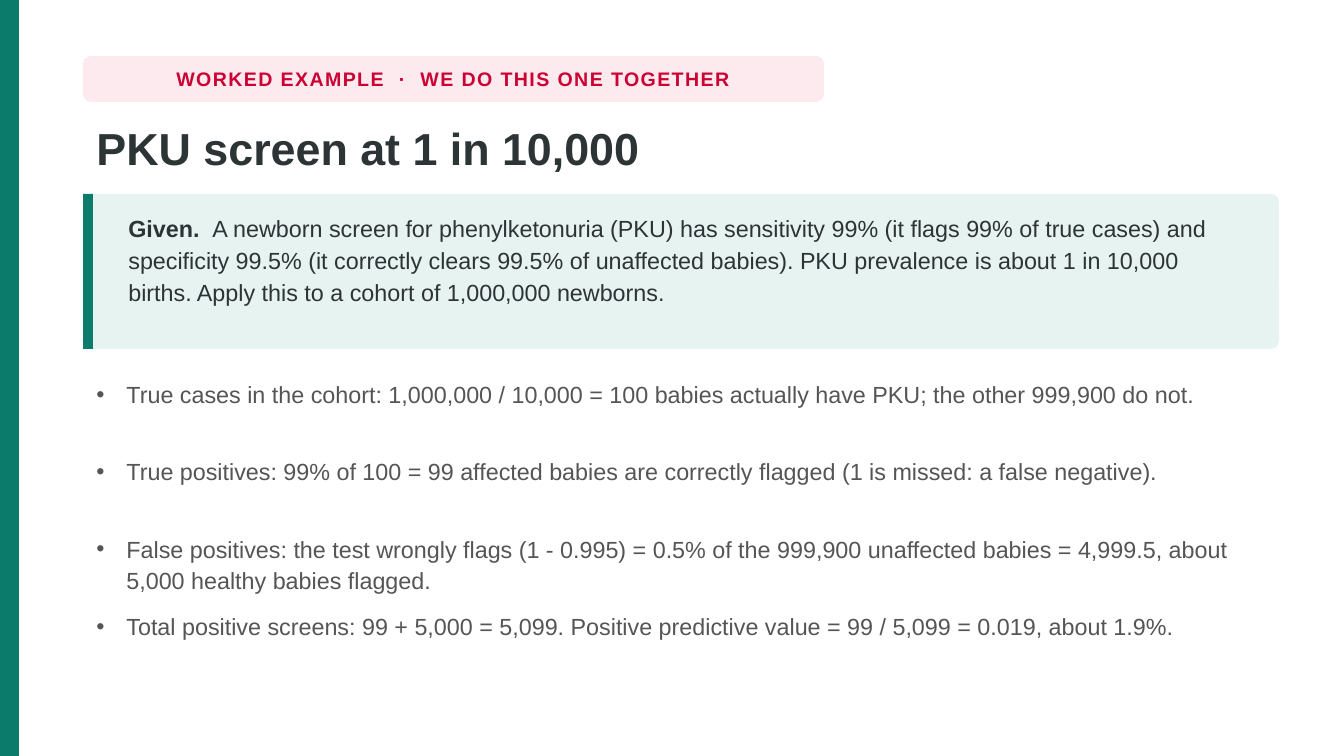
"""Build the worked-example slide on a newborn PKU screen."""
import pptx
import pptx.dml.color
import pptx.enum.shapes
import pptx.enum.text
import pptx.util
from lxml import etree
from pptx.oxml.ns import qn

LABEL = "WORKED EXAMPLE  ·  WE DO THIS ONE TOGETHER"
TITLE = "PKU screen at 1 in 10,000"
GIVEN_LEAD = "Given.  "
GIVEN = (
    "A newborn screen for phenylketonuria (PKU) has sensitivity 99% (it flags 99% of true cases) "
    "and specificity 99.5% (it correctly clears 99.5% of unaffected babies). PKU prevalence is "
    "about 1 in 10,000 births. Apply this to a cohort of 1,000,000 newborns."
)
STEPS = [
    ("True cases in the cohort: 1,000,000 / 10,000 = 100 babies actually have PKU; "
     "the other 999,900 do not.", 1),
    ("True positives: 99% of 100 = 99 affected babies are correctly flagged "
     "(1 is missed: a false negative).", 1),
    ("False positives: the test wrongly flags (1 - 0.995) = 0.5% of the 999,900 unaffected "
     "babies = 4,999.5, about 5,000 healthy babies flagged.", 2),
    ("Total positive screens: 99 + 5,000 = 5,099. Positive predictive value = 99 / 5,099 = 0.019, "
     "about 1.9%.", 1),
]
COLORS = {
    "green": "0B7B6B", "mint": "E6F3F0", "pink": "FDEAEF",
    "red": "CC0033", "ink": "2D3436", "gray": "555555",
}
FONT = "Arial"
WIDTH, HEIGHT = 1344, 756
LEFT, CONTENT_WIDTH = 83, 1196
PANEL_TOP, PANEL_HEIGHT = 194, 155
STEP_PITCH, STEP_LINE, STEP_INDENT = 77, 31, 30


def px(length):
    return pptx.util.Emu(round(length * 9144000 / WIDTH))


def color(name):
    return pptx.dml.color.RGBColor.from_string(COLORS[name])


def add_block(page, left, top, width, height, fill, radius=None):
    kinds = pptx.enum.shapes.MSO_SHAPE
    kind = kinds.RECTANGLE if radius is None else kinds.ROUNDED_RECTANGLE
    block = page.shapes.add_shape(kind, px(left), px(top), px(width), px(height))
    if radius is not None:
        block.adjustments[0] = radius / height
    block.shadow.inherit = False
    block.fill.solid()
    block.fill.fore_color.rgb = color(fill)
    block.line.fill.background()
    return block


def place(box, left, top, width, height):
    box.left, box.top, box.width, box.height = px(left), px(top), px(width), px(height)
    frame = box.text_frame
    frame.word_wrap = True
    frame.auto_size = pptx.enum.text.MSO_AUTO_SIZE.NONE
    frame.vertical_anchor = pptx.enum.text.MSO_ANCHOR.TOP
    return frame


def write(paragraph, text, size=12.5, ink="ink", bold=False, align="LEFT", line=1.0, before=0, tracking=0):
    paragraph.alignment = pptx.enum.text.PP_ALIGN[align]
    paragraph.line_spacing = line
    paragraph.space_before = px(before)
    span = paragraph.add_run()
    span.text = text
    span.font.name = FONT
    span.font.size = pptx.util.Pt(size)
    span.font.bold = bold
    span.font.color.rgb = color(ink)
    if tracking:
        span.font._element.set("spc", str(tracking))


def add_bullet(paragraph):
    properties = paragraph._p.get_or_add_pPr()
    properties.set("marL", str(px(STEP_INDENT)))
    properties.set("indent", str(-px(STEP_INDENT)))
    etree.SubElement(properties, qn("a:buChar")).set("char", "•")


def main():
    deck = pptx.Presentation()
    deck.slide_width, deck.slide_height = px(WIDTH), px(HEIGHT)
    page = deck.slides.add_slide(deck.slide_layouts[1])
    title, body = page.placeholders

    add_block(page, 0, 0, 19, HEIGHT, "green")

    label = add_block(page, LEFT, 56, 741, 46, "pink", radius=8).text_frame
    label.word_wrap = False
    label.vertical_anchor = pptx.enum.text.MSO_ANCHOR.MIDDLE
    write(label.paragraphs[0], LABEL, size=10.5, ink="red", bold=True, align="CENTER", tracking=80)

    heading = place(title, LEFT, 113, CONTENT_WIDTH, 75)
    write(heading.paragraphs[0], TITLE, size=24, bold=True, line=1.02)

    panel = add_block(page, LEFT, PANEL_TOP, CONTENT_WIDTH, PANEL_HEIGHT, "mint", radius=8)
    given = place(panel, LEFT, PANEL_TOP, CONTENT_WIDTH, PANEL_HEIGHT)
    given.margin_left, given.margin_right = px(43), px(46)
    given.margin_top = given.margin_bottom = px(14)
    write(given.paragraphs[0], GIVEN_LEAD, bold=True, line=1.14)
    write(given.paragraphs[0], GIVEN, line=1.14)
    add_block(page, LEFT, PANEL_TOP, 10, PANEL_HEIGHT, "green")

    steps = place(body, LEFT, 370, CONTENT_WIDTH, 297)
    before = 0
    for index, (text, lines) in enumerate(STEPS):
        paragraph = steps.add_paragraph() if index else steps.paragraphs[0]
        add_bullet(paragraph)
        write(paragraph, text, ink="gray", line=1.12, before=before)
        before = STEP_PITCH - lines * STEP_LINE

    deck.save("out.pptx")


if __name__ == "__main__":
    main()
